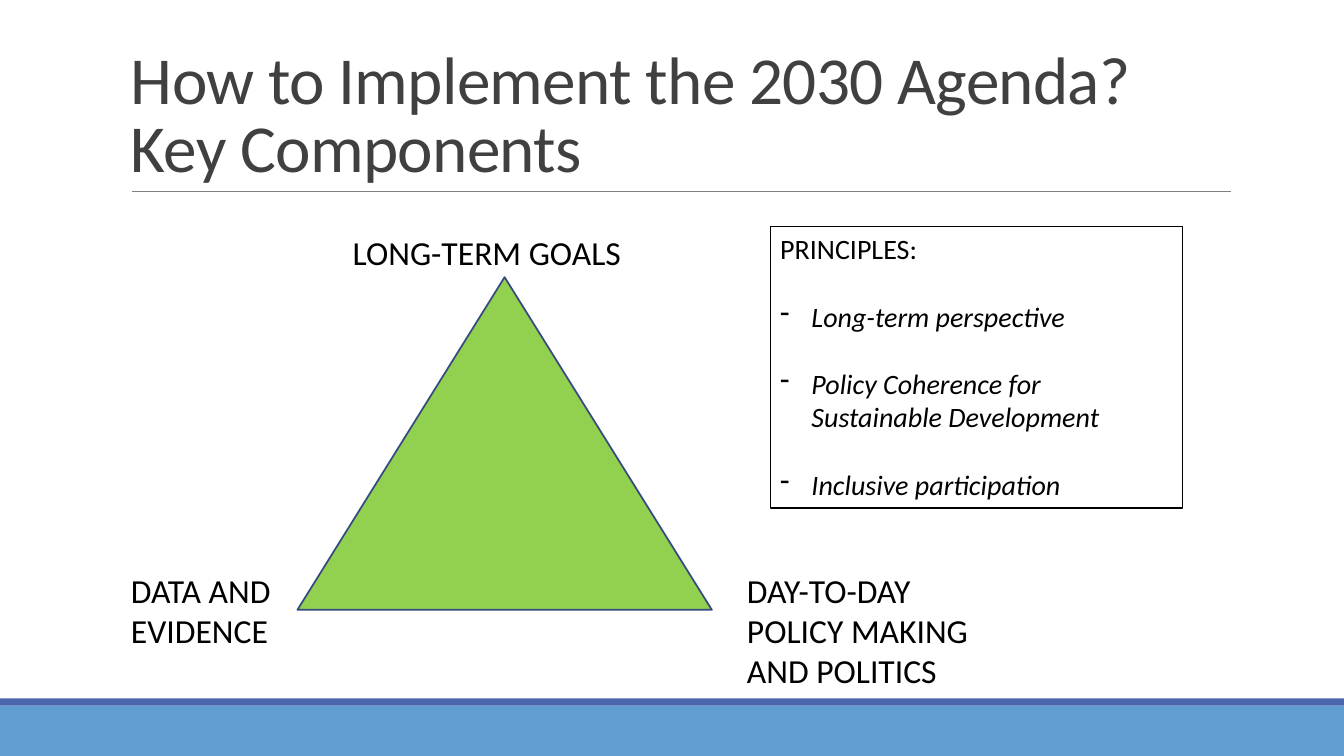
from lxml.etree import SubElement
from pptx import Presentation
from pptx.dml.color import RGBColor
from pptx.enum.shapes import MSO_CONNECTOR, MSO_SHAPE
from pptx.enum.text import MSO_ANCHOR, MSO_AUTO_SIZE, PP_ALIGN
from pptx.oxml.ns import qn
from pptx.util import Inches, Pt

COLORS = {
    "footer": "629DD1",
    "footer_edge": "4A66AC",
    "rule": "808080",
    "title": "404040",
    "triangle": "92D050",
    "triangle_edge": "374B7F",
    "text": "000000",
}
FONT = "Calibri"


def color(name):
    return RGBColor.from_string(COLORS[name])


def add_shape(slide, preset, box, fill=None, line=None, width=0.75):
    shape = slide.shapes.add_shape(preset, *map(Inches, box))
    shape.shadow.inherit = False
    if fill:
        shape.fill.solid()
        shape.fill.fore_color.rgb = color(fill)
    else:
        shape.fill.background()
    if line:
        shape.line.color.rgb = color(line)
        shape.line.width = Pt(width)
    else:
        shape.line.fill.background()
    return shape


def add_rule(slide, left, right, y):
    rule = slide.shapes.add_connector(
        MSO_CONNECTOR.STRAIGHT, Inches(left), Inches(y), Inches(right), Inches(y))
    rule.line.color.rgb = color("rule")
    rule.line.width = Pt(0.5)
    SubElement(rule._element.spPr, qn("a:effectLst"))


def style(paragraph, size, ink="text", italic=False):
    paragraph.alignment = PP_ALIGN.LEFT
    font = paragraph.font
    font.name = FONT
    font.size = Pt(size)
    font.italic = italic
    font.color.rgb = color(ink)


def add_text(slide, box, text, size, ink="text"):
    frame = slide.shapes.add_textbox(*map(Inches, box)).text_frame
    frame.word_wrap = True
    frame.text = text
    for paragraph in frame.paragraphs:
        style(paragraph, size, ink)
    return frame


def add_title(slide, text):
    frame = add_text(slide, (1.2, 0.31, 11, 1.59), text, 48, "title")
    frame.vertical_anchor = MSO_ANCHOR.BOTTOM
    heading = frame.paragraphs[0]
    heading.line_spacing = 0.85
    for run in heading.runs:
        run._r.get_or_add_rPr().set("spc", "-50")


def add_dash(paragraph):
    properties = paragraph._p.get_or_add_pPr()
    indent = Inches(0.31)
    properties.set("marL", str(indent))
    properties.set("indent", str(-indent))
    SubElement(properties, qn("a:buFontTx"))
    SubElement(properties, qn("a:buChar"), char="-")


def add_principles(slide, heading, principles):
    panel = add_shape(slide, MSO_SHAPE.RECTANGLE, (7.64, 2.25, 4.09, 2.79), line="text")
    frame = panel.text_frame
    frame.word_wrap = True
    frame.auto_size = MSO_AUTO_SIZE.SHAPE_TO_FIT_TEXT
    frame.vertical_anchor = MSO_ANCHOR.TOP
    frame.text = heading
    style(frame.paragraphs[0], 20)
    for principle in principles:
        item = frame.add_paragraph()
        item.text = principle
        add_dash(item)
        item.space_before = Pt(24)
        style(item, 20, italic=True)


def main():
    deck = Presentation()
    deck.slide_width, deck.slide_height = Inches(13.33), Inches(7.5)
    slide = deck.slides.add_slide(deck.slide_layouts[6])

    add_shape(slide, MSO_SHAPE.RECTANGLE, (0, 7, 13.33, 0.5), "footer")
    add_shape(slide, MSO_SHAPE.RECTANGLE, (0, 6.93, 13.33, 0.07), "footer_edge")
    add_rule(slide, 1.31, 12.21, 1.9)
    add_title(slide, "How to Implement the 2030 Agenda?\vKey Components")

    add_shape(slide, MSO_SHAPE.ISOSCELES_TRIANGLE, (2.95, 2.75, 4.11, 3.3),
              "triangle", "triangle_edge", 1.25)
    for box, label in (
        ((3.4, 2.25, 3.91, 0.5), "LONG-TERM GOALS"),
        ((1.2, 5.6, 1.75, 0.91), "DATA AND\nEVIDENCE"),
        ((7.31, 5.6, 2.52, 1.31), "DAY-TO-DAY POLICY MAKING\nAND POLITICS"),
    ):
        add_text(slide, box, label, 24)

    add_principles(slide, "PRINCIPLES:", (
        "Long-term perspective",
        "Policy Coherence for Sustainable Development",
        "Inclusive participation",
    ))
    deck.save("out.pptx")


if __name__ == "__main__":
    main()
